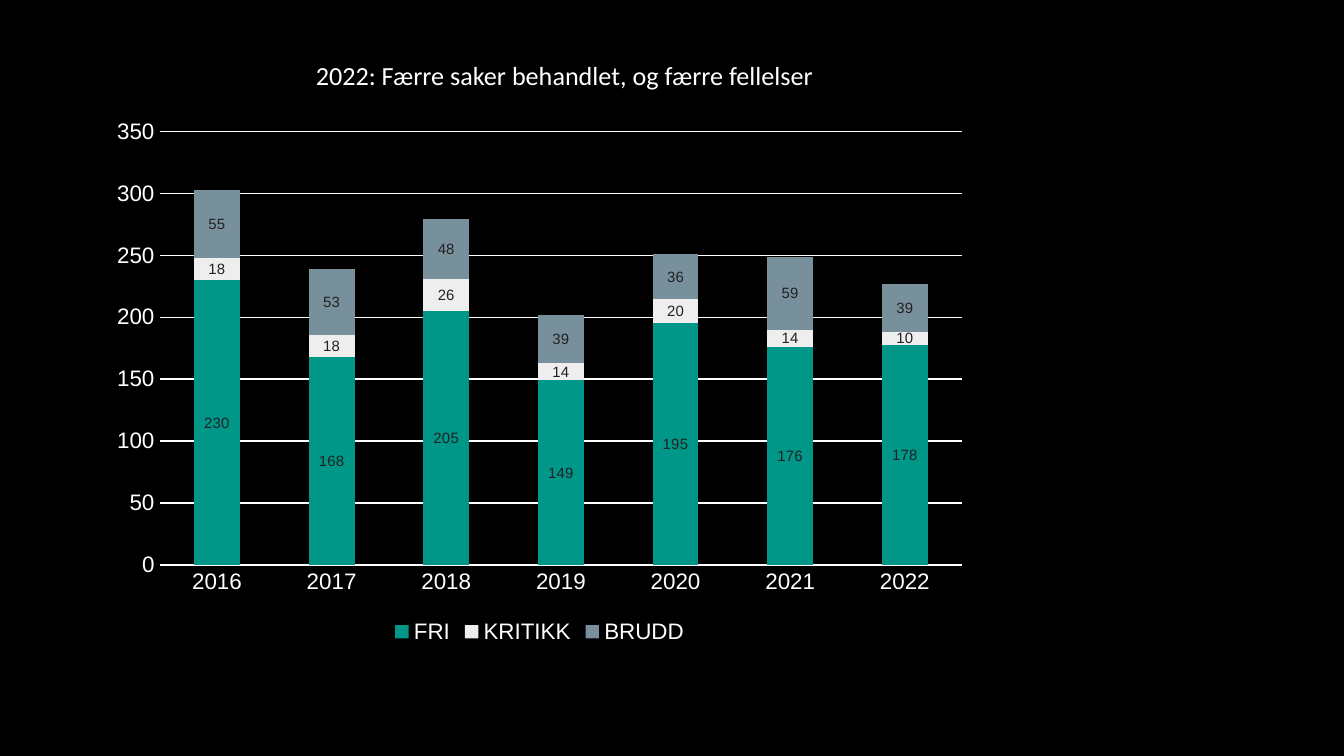
from typing import NamedTuple

from pptx import Presentation
from pptx.chart.chart import Chart
from pptx.chart.data import CategoryChartData
from pptx.dml.color import RGBColor
from pptx.enum.chart import XL_CHART_TYPE as ChartType
from pptx.enum.chart import XL_LABEL_POSITION as LabelPosition
from pptx.enum.chart import XL_LEGEND_POSITION as LegendPosition
from pptx.enum.chart import XL_TICK_MARK as TickMark
from pptx.enum.text import MSO_ANCHOR, MSO_AUTO_SIZE, PP_ALIGN
from pptx.slide import Slide
from pptx.text.text import Font
from pptx.util import Inches, Pt

BLACK = RGBColor(0x00, 0x00, 0x00)
WHITE = RGBColor(0xFF, 0xFF, 0xFF)
TEAL = RGBColor(0x00, 0x96, 0x88)
PALE_GREY = RGBColor(0xEE, 0xEE, 0xEE)
BLUE_GREY = RGBColor(0x78, 0x90, 0x9C)
LABEL_GREY = RGBColor(0x21, 0x21, 0x21)


class Outcome(NamedTuple):
    name: str
    cases: tuple[int, ...]
    color: RGBColor


YEARS = [str(year) for year in range(2016, 2023)]
OUTCOMES = [
    Outcome("FRI", (230, 168, 205, 149, 195, 176, 178), TEAL),
    Outcome("KRITIKK", (18, 18, 26, 14, 20, 14, 10), PALE_GREY),
    Outcome("BRUDD", (55, 53, 48, 39, 36, 59, 39), BLUE_GREY),
]


def style_font(font: Font, size: int, color: RGBColor = WHITE, name: str = "Arial") -> None:
    font.name = name
    font.size = Pt(size)
    font.bold = False
    font.color.rgb = color


def add_title(page: Slide, text: str) -> None:
    title = page.shapes.title
    title.left, title.top = Inches(2.25), Inches(0.39)
    title.width, title.height = Inches(4.33), Inches(0.34)
    frame = title.text_frame
    frame.word_wrap = True
    frame.auto_size = MSO_AUTO_SIZE.SHAPE_TO_FIT_TEXT
    frame.vertical_anchor = MSO_ANCHOR.TOP
    para = frame.paragraphs[0]
    para.alignment = PP_ALIGN.LEFT
    span = para.add_run()
    span.text = text
    style_font(span.font, 14, name="Calibri")


def style_axes(chart: Chart) -> None:
    for axis in (chart.category_axis, chart.value_axis):
        axis.major_tick_mark = axis.minor_tick_mark = TickMark.NONE
        style_font(axis.tick_labels.font, 12)
    year_line = chart.category_axis.format.line
    year_line.color.rgb = WHITE
    year_line.width = Pt(0.75)

    case_axis = chart.value_axis
    case_axis.minimum_scale, case_axis.maximum_scale = 0, 350
    case_axis.major_unit = 50
    case_axis.format.line.fill.background()
    case_axis.has_major_gridlines = True
    grid_line = case_axis.major_gridlines.format.line
    grid_line.color.rgb = WHITE
    grid_line.width = Pt(0.75)


def add_outcome_chart(page: Slide) -> None:
    data = CategoryChartData()
    data.categories = YEARS
    for outcome in OUTCOMES:
        data.add_series(outcome.name, outcome.cases)
    chart = page.shapes.add_chart(
        ChartType.COLUMN_STACKED,
        Inches(0.74), Inches(0.81), Inches(6.55), Inches(4.02), data,
    ).chart
    style_font(chart.font, 10)
    chart.has_title = False
    style_axes(chart)

    chart.has_legend = True
    chart.legend.position = LegendPosition.BOTTOM
    chart.legend.include_in_layout = False
    style_font(chart.legend.font, 12)

    plot = chart.plots[0]
    plot.gap_width = 150
    plot.overlap = 100
    plot.vary_by_categories = False
    for series, outcome in zip(plot.series, OUTCOMES):
        series.format.fill.solid()
        series.format.fill.fore_color.rgb = outcome.color
        labels = series.data_labels
        labels.show_value = True
        labels.position = LabelPosition.CENTER
        style_font(labels.font, 8, LABEL_GREY)


def main() -> None:
    deck = Presentation()
    deck.slide_width = Inches(10)
    deck.slide_height = deck.slide_width * 9 // 16
    page = deck.slides.add_slide(deck.slide_layouts.get_by_name("Title Only"))
    page.background.fill.solid()
    page.background.fill.fore_color.rgb = BLACK
    add_outcome_chart(page)
    add_title(page, "2022: Færre saker behandlet, og færre fellelser")
    deck.save("out.pptx")


if __name__ == "__main__":
    main()
